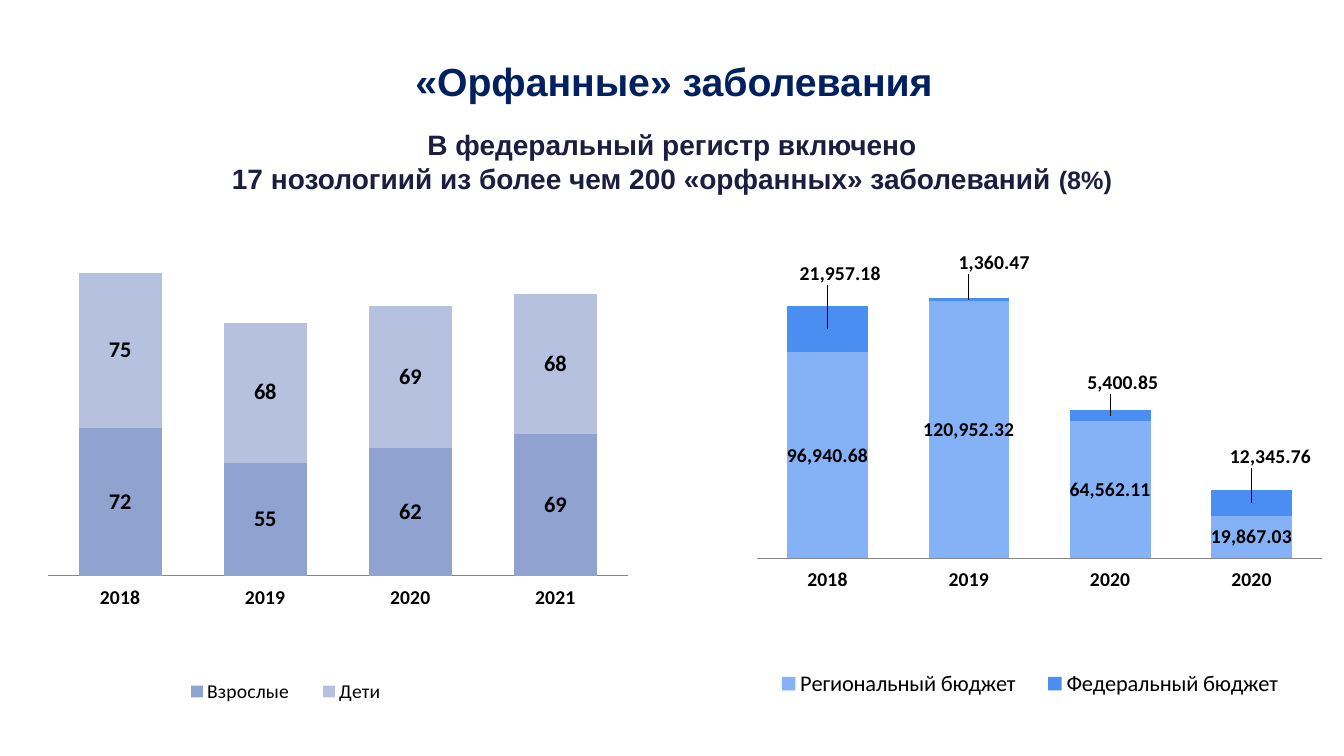
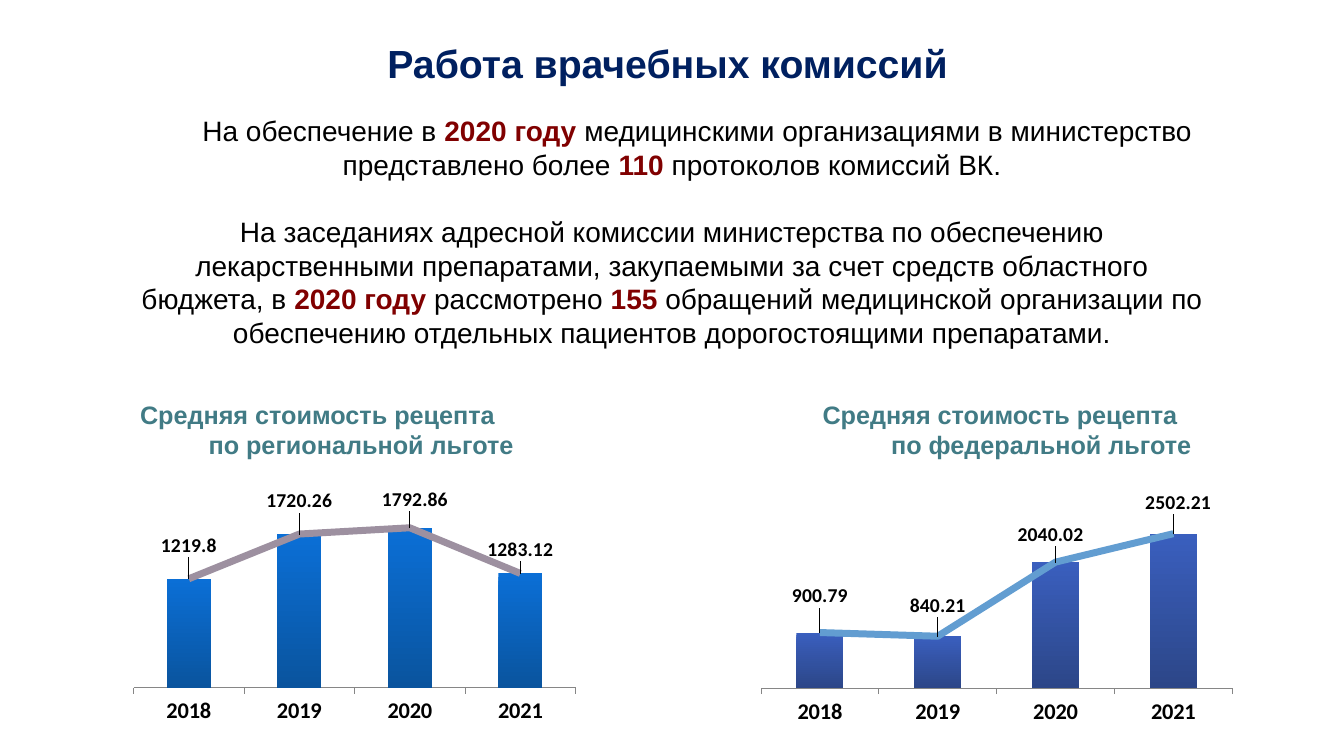
from lxml.etree import SubElement
from pptx import Presentation
from pptx.chart.data import CategoryChartData as ChartData
from pptx.dml.color import RGBColor
from pptx.enum.chart import XL_CHART_TYPE as Kind
from pptx.enum.chart import XL_LABEL_POSITION as Spot
from pptx.enum.chart import XL_LEGEND_POSITION as Side
from pptx.enum.chart import XL_MARKER_STYLE as Marker
from pptx.enum.chart import XL_TICK_LABEL_POSITION as Label
from pptx.enum.chart import XL_TICK_MARK as Tick
from pptx.enum.text import PP_ALIGN as Align
from pptx.oxml import parse_xml
from pptx.oxml.ns import nsdecls, qn
from pptx.util import Emu, Pt

PX = 9144
COLORS = {
    "title": "002060",
    "lead": "1B1E3E",
    "text": "000000",
    "accent": "800000",
    "head": "417B85",
    "axis": "868686",
    "adult": "90A2CF",
    "child": "B5C1DF",
    "region": "85B2F6",
    "federal": "4A8EF2",
    "blue": "0B6FD6",
    "navy": "0A549E",
    "royal": "3A5FBE",
    "indigo": "2C4688",
    "mauve": "9D90A0",
    "sky": "629DD1",
}
YEARS = ["2018", "2019", "2020", "2021"]


def px(n):
    return Emu(n * PX)


def rgb(name):
    return RGBColor.from_string(COLORS[name])


def style(font, size, color="text", bold=False, face="Calibri"):
    font.size = Pt(size)
    font.bold = bold
    font.name = face
    font.color.rgb = rgb(color)


def add_text(slide, box, paras, align=Align.CENTER, gap=0, indent=0):
    frame = slide.shapes.add_textbox(*map(px, box)).text_frame
    frame.word_wrap = True
    for i, runs in enumerate(paras):
        para = frame.add_paragraph() if i else frame.paragraphs[0]
        para.alignment = align
        if i and gap:
            para.space_before = Pt(gap)
        if i and indent:
            para._p.get_or_add_pPr().set("marL", str(px(indent)))
        for text, size, color, bold in runs:
            run = para.add_run()
            run.text = text
            style(run.font, size, color, bold, "Arial")


def add_page(deck, title, left, top):
    slide = deck.slides.add_slide(deck.slide_layouts[6])
    add_text(slide, (left, top, 1333, 57), [[(title, 28, "title", True)]])
    return slide


def layout(x, y, w=None, h=None, mode="edge", inner=False):
    root = parse_xml(f"<c:layout {nsdecls('c')}><c:manualLayout/></c:layout>")
    parts = [("layoutTarget", "inner")] if inner else []
    if mode == "edge":
        parts += [("xMode", mode), ("yMode", mode)]
    parts += [("x", x), ("y", y)]
    if w:
        parts += [("w", w), ("h", h)]
    for tag, val in parts:
        SubElement(root[0], qn(f"c:{tag}")).set("val", str(val))
    return root


def add_chart(slide, kind, box, plot, cats, rows, top, size, gap, fmt="General"):
    data = ChartData(number_format=fmt)
    data.categories = cats
    for name, vals in rows:
        data.add_series(name, vals)
    chart = slide.shapes.add_chart(kind, *map(px, box), data).chart
    chart.has_title = False
    chart.has_legend = False
    style(chart.font, 18)
    area = chart._chartSpace.chart.plotArea
    area.insert(0, layout(*plot, inner=True))
    bars = chart.plots[0]
    bars.gap_width = gap
    bars.vary_by_categories = False
    vals = chart.value_axis
    vals.visible = False
    vals.has_major_gridlines = False
    vals.minimum_scale = 0
    vals.maximum_scale = top
    axis = chart.category_axis
    axis.tick_label_position = Label.LOW
    axis.format.line.color.rgb = rgb("axis")
    axis.format.line.width = Pt(0.75)
    style(axis.tick_labels.font, size, bold=True)
    return chart


def add_labels(series, size, spot, shifts=()):
    labels = series.data_labels
    labels.show_value = True
    labels.position = spot
    style(labels.font, size, bold=True)
    for i, shift in enumerate(shifts):
        label = series.points[i].data_label
        label.position = spot
        style(label.font, size, bold=True)
        label._get_or_add_dLbl().insert(1, layout(*shift, mode="factor"))


def add_stack(slide, box, plot, cats, rows, top, fills, sizes, key, fmt="General", shifts=()):
    chart = add_chart(slide, Kind.COLUMN_STACKED, box, plot, cats, rows, top, 14, 75, fmt)
    chart.plots[0].overlap = 100
    chart.category_axis.major_tick_mark = Tick.NONE
    for series, fill, moves in zip(chart.plots[0].series, fills, ((), shifts)):
        series.format.fill.solid()
        series.format.fill.fore_color.rgb = rgb(fill)
        add_labels(series, sizes[0], Spot.CENTER, moves)
    chart.has_legend = True
    legend = chart.legend
    legend.position = Side.BOTTOM
    legend.include_in_layout = False
    style(legend.font, sizes[1])
    legend._element.insert(1, layout(*key))


def add_combo(slide, box, plot, costs, trend, top, fills, stroke, shifts):
    rows = [("Series 1", costs), ("Series 2", trend)]
    chart = add_chart(slide, Kind.COLUMN_CLUSTERED, box, plot, YEARS, rows, top, 16, 150)
    chart.category_axis.major_tick_mark = Tick.OUTSIDE
    bars = chart.plots[0]
    fill = bars.series[0].format.fill
    fill.gradient()
    fill.gradient_angle = 270
    for stop, name in zip(fill.gradient_stops, fills):
        stop.color.rgb = rgb(name)
    add_labels(bars.series[0], 14, Spot.OUTSIDE_END, shifts)

    group = parse_xml(
        f"<c:lineChart {nsdecls('c')}><c:grouping val='standard'/>"
        "<c:varyColors val='0'/><c:marker val='1'/></c:lineChart>"
    )
    node = bars.series[1]._element
    for flag in node.findall(qn("c:invertIfNegative")):
        node.remove(flag)
    group.insert(2, node)
    for ref in bars._element.findall(qn("c:axId")):
        SubElement(group, qn("c:axId")).set("val", ref.get("val"))
    bars._element.addnext(group)
    line = chart.plots[1].series[0]
    line.smooth = False
    line.marker.style = Marker.NONE
    line.format.line.color.rgb = rgb(stroke)
    line.format.line.width = Pt(5)


def add_orphan(deck):
    slide = add_page(deck, "«Орфанные» заболевания", 2, 52)
    lead = "17 нозологиий из более чем 200 «орфанных» заболеваний "
    add_text(slide, (0, 122, 1333, 77), [
        [("В федеральный регистр включено", 20, "lead", True)],
        [(lead, 20, "lead", True), ("(8%)", 18, "lead", True)],
    ])
    add_stack(
        slide, (29, 225, 606, 488), (0.03, 0.04, 0.95, 0.67), YEARS,
        [("Взрослые", (72, 55, 62, 69)), ("Дети", (75, 68, 69, 68))],
        160, ("adult", "child"), (16, 14), (0.22, 0.91, 0.4, 0.07),
    )
    add_stack(
        slide, (694, 245, 630, 461), (0.09, 0.03, 0.89, 0.64),
        ["2018", "2019", "2020", "2020"],
        [
            ("Региональный бюджет", (96940.68, 120952.32, 64562.11, 19867.03)),
            ("Федеральный бюджет", (21957.18, 1360.47, 5400.85, 12345.76)),
        ],
        140000, ("region", "federal"), (14, 16), (0.09, 0.9, 0.86, 0.08), "#,##0.00",
        ((0.02, -0.12), (0.04, -0.08), (0.02, -0.07), (0.03, -0.1)),
    )


def add_board(deck):
    slide = add_page(deck, "Работа врачебных комиссий ", 1, 34)

    def plain(text):
        return text, 20, "text", False

    def strong(text):
        return text, 20, "accent", True

    add_text(slide, (127, 108, 1079, 264), [
        [
            plain("\tНа обеспечение в "), strong("2020 году "),
            plain("медицинскими организациями в министерство представлено более "),
            strong("110"), plain(" протоколов комиссий ВК."),
        ],
        [
            plain("На заседаниях адресной комиссии министерства по обеспечению "
                  "лекарственными препаратами, закупаемыми за счет средств "
                  "областного бюджета, в "),
            strong("2020 году "), plain("рассмотрено "), strong("155"),
            plain(" обращений медицинской организации по обеспечению отдельных "
                  "пациентов дорогостоящими препаратами."),
        ],
    ], gap=24)
    for left, kind in ((129, "региональной"), (806, "федеральной")):
        lines = ("Средняя стоимость рецепта", f"по {kind} льготе")
        add_text(
            slide, (left, 391, 445, 71),
            [[(line, 18, "head", True)] for line in lines], Align.LEFT, indent=68,
        )
    add_combo(
        slide, (745, 458, 492, 292), (0.02, 0.14, 0.95, 0.63),
        (900.79, 840.21, 2040.02, 2502.21), (900, 840, 2040, 2500), 3000,
        ("royal", "indigo"), "sky",
        ((0, -0.07), (0, -0.05), (-0.01, -0.04), (0.01, -0.05)),
    )
    add_combo(
        slide, (72, 481, 504, 240), (0.12, 0.1, 0.87, 0.74),
        (1219.8, 1720.26, 1792.86, 1283.12), (1220, 1720, 1790, 1280), 2000,
        ("blue", "navy"), "mauve",
        ((0, -0.07), (0, -0.07), (0.01, -0.05), (0, -0.03)),
    )


def main():
    deck = Presentation()
    deck.slide_width = px(1333)
    deck.slide_height = px(750)
    add_orphan(deck)
    add_board(deck)
    deck.save("out.pptx")


if __name__ == "__main__":
    main()
